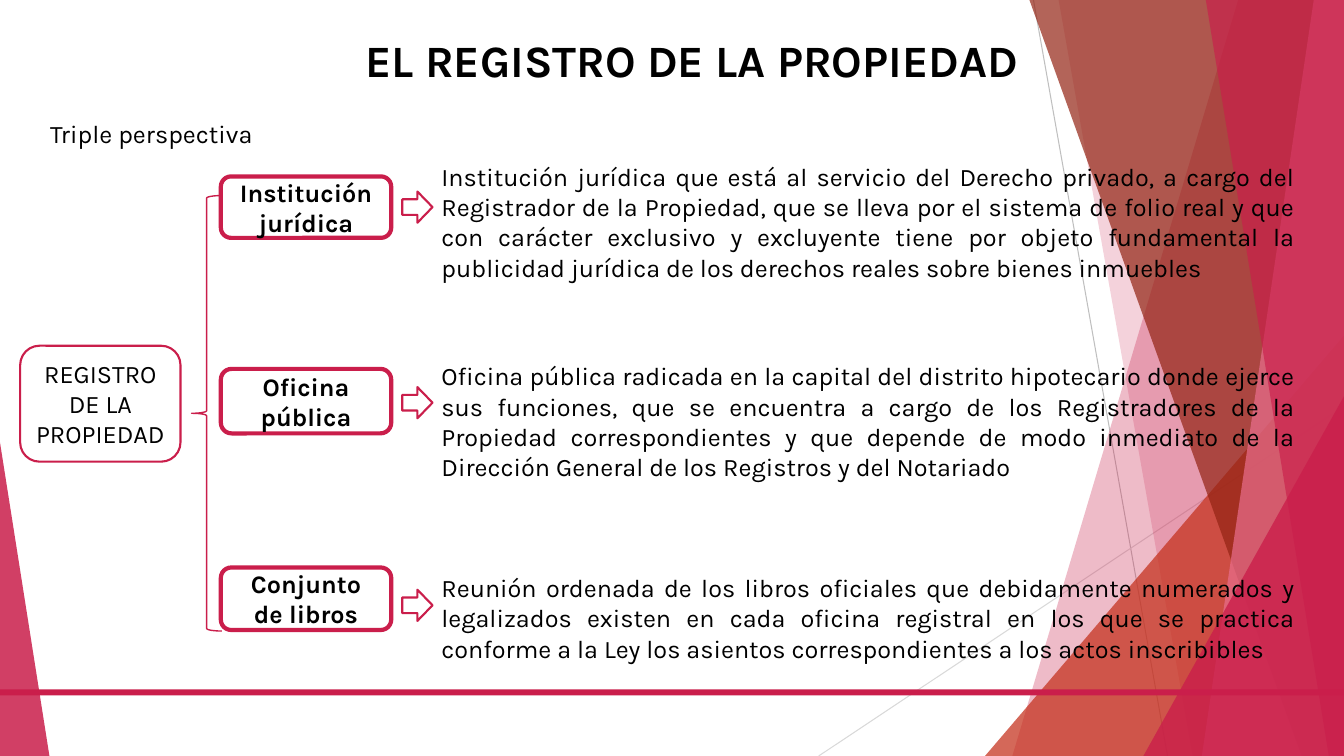
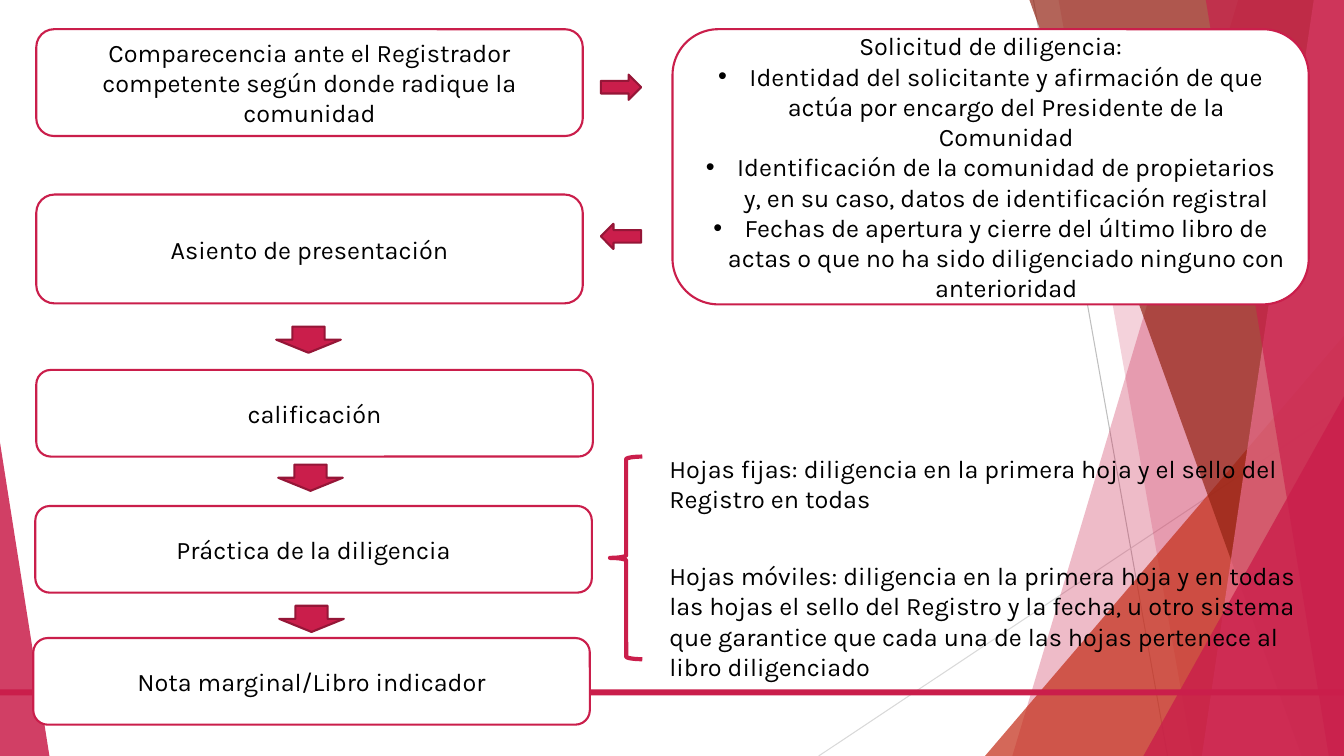
"""Build two slides on the land registry over one shared faceted backdrop."""
from lxml import etree
from pptx import Presentation
from pptx import util as u
from pptx.dml.color import RGBColor
from pptx.enum import shapes, text
from pptx.oxml import ns

CELL = 0.1
COLUMNS, ROWS = 133.3, 75
FONT, BODY_SIZE, TITLE_SIZE = "Karla", 18, 32
CRIMSON, DARK_CRIMSON, PINK = "CA1E4B", "951637", "E96E8E"
RUST, MAROON = "C42F1A", "932313"
BLACK, WHITE = "000000", "FFFFFF"
Preset, Align, Anchor = shapes.MSO_SHAPE, text.PP_ALIGN, text.MSO_ANCHOR


def grid(*cells):
    return [u.Inches(round(cell * CELL, 2)) for cell in cells]


def colour(value):
    return RGBColor.from_string(value)


def write(frame, content, size=BODY_SIZE, bold=False, align=Align.LEFT,
          anchor=Anchor.TOP, bullets=()):
    frame.word_wrap = True
    frame.auto_size = text.MSO_AUTO_SIZE.NONE
    frame.vertical_anchor = anchor
    for index, line in enumerate([content, *bullets]):
        paragraph = frame.add_paragraph() if index else frame.paragraphs[0]
        paragraph.alignment = align
        run = paragraph.add_run()
        run.text = line
        run.font.name, run.font.size, run.font.bold = FONT, u.Pt(size), bold
        run.font.color.rgb = colour(BLACK)
        if index:
            properties = paragraph._p.get_or_add_pPr()
            indent = u.Inches(0.31)
            properties.set("marL", str(indent))
            properties.set("indent", str(-indent))
            etree.SubElement(properties, ns.qn("a:buFont"), typeface="Arial")
            etree.SubElement(properties, ns.qn("a:buChar"), char="•")


class Deck:
    def __init__(self):
        self.presentation = Presentation()
        self.presentation.slide_width, self.presentation.slide_height = grid(COLUMNS, ROWS)
        self.slide = None

    def add_slide(self, title=None):
        layout = "Title Only" if title else "Blank"
        self.slide = self.presentation.slides.add_slide(
            self.presentation.slide_layouts.get_by_name(layout))
        if title:
            shape = self.slide.shapes.title
            shape.left, shape.top, shape.width, shape.height = grid(5.9, 2.7, 125.5, 6.4)
            write(shape.text_frame, title, size=TITLE_SIZE, bold=True, align=Align.CENTER)

    def paint(self, shape, fill=None, line=None, width=1.5, opacity=100):
        shape.shadow.inherit = False
        if fill:
            shape.fill.solid()
            shape.fill.fore_color.rgb = colour(fill)
        else:
            shape.fill.background()
        if opacity < 100:
            tint = shape.element.spPr.find(".//" + ns.qn("a:srgbClr"))
            etree.SubElement(tint, ns.qn("a:alpha"), val=str(opacity * 1000))
        if line:
            shape.line.color.rgb = colour(line)
            shape.line.width = u.Pt(width)
        else:
            shape.line.fill.background()

    def shape(self, preset, place, adjust=None, **style):
        shape = self.slide.shapes.add_shape(preset, *grid(*place))
        if adjust is not None:
            shape.adjustments[0] = adjust
        self.paint(shape, **style)
        return shape

    def facet(self, points, **style):
        corners = [tuple(grid(*point)) for point in points]
        builder = self.slide.shapes.build_freeform(*corners[0])
        builder.add_line_segments(corners[1:], close=True)
        self.paint(builder.convert_to_shape(), **style)

    def rule(self, ends, line):
        connector = self.slide.shapes.add_connector(
            shapes.MSO_CONNECTOR.STRAIGHT, *grid(*ends))
        connector.line.color.rgb = colour(line)
        connector.line.width = u.Pt(0.75)
        etree.SubElement(connector.element.spPr, ns.qn("a:effectLst"))

    def box(self, place, content, width=1.5, **style):
        shape = self.shape(Preset.ROUNDED_RECTANGLE, place, fill=WHITE,
                           line=CRIMSON, width=width)
        write(shape.text_frame, content, align=Align.CENTER,
              anchor=Anchor.MIDDLE, **style)

    def arrow(self, preset, place, fill=CRIMSON, line=DARK_CRIMSON):
        self.shape(preset, place, fill=fill, line=line)

    def brace(self, place, width):
        self.shape(Preset.LEFT_BRACE, place, line=CRIMSON, width=width)

    def note(self, place, content, **style):
        write(self.slide.shapes.add_textbox(*grid(*place)).text_frame, content, **style)

    def move_to_master(self):
        tree = self.presentation.slide_master.shapes.element
        drawn = [shape for shape in self.slide.shapes if not shape.is_placeholder]
        for number, shape in enumerate(drawn, 100):
            shape.element.find(".//" + ns.qn("p:cNvPr")).set("id", str(number))
            tree.append(shape.element)


def draw_backdrop(deck):
    def band(top, bottom, fill, opacity):
        deck.facet([(top, 0), (COLUMNS, 0), (COLUMNS, ROWS), (bottom, ROWS)],
                   fill=fill, opacity=opacity)

    def corner(left, top, width, fill, opacity, apex=1):
        deck.shape(Preset.ISOSCELES_TRIANGLE, (left, top, width, ROWS - top),
                   adjust=apex, fill=fill, opacity=opacity)

    deck.rule((102.5, 0, 115.8, ROWS), "BFBFBF")
    deck.rule((COLUMNS, 40.3, 81.2, ROWS), "D9D9D9")
    band(122.8, 100.4, CRIMSON, 30)
    band(105, 118.3, CRIMSON, 20)
    corner(97.7, 33.3, 35.6, RUST, 72)
    band(102.1, 129.1, MAROON, 70)
    band(130.3, 119.2, PINK, 70)
    band(119.6, 131.8, CRIMSON, 65)
    corner(113.4, 39.3, 19.9, CRIMSON, 80)
    corner(0, 43.9, 4.9, CRIMSON, 85, apex=0)
    deck.shape(Preset.RECTANGLE, (0, 68.4, COLUMNS, 0.6), fill=CRIMSON)
    deck.move_to_master()


def draw_perspectives(deck):
    deck.note((4, 11.2, 24, 4), "Triple perspectiva")
    deck.box((2, 34.3, 15.9, 11.5), "REGISTRO DE LA PROPIEDAD")
    deck.brace((19, 19.4, 3, 43.2), width=1)
    perspectives = [
        ("Institución jurídica", 17.5, 6.1, 19, 15.5,
         "Institución jurídica que está al servicio del Derecho privado, a cargo del "
         "Registrador de la Propiedad, que se lleva por el sistema de folio real y que "
         "con carácter exclusivo y excluyente tiene por objeto fundamental la publicidad "
         "jurídica de los derechos reales sobre bienes inmuebles"),
        ("Oficina pública", 36.6, 6.4, 38.4, 35.3,
         "Oficina pública radicada en la capital del distrito hipotecario donde ejerce "
         "sus funciones, que se encuentra a cargo de los Registradores de la Propiedad "
         "correspondientes y que depende de modo inmediato de la Dirección General de "
         "los Registros y del Notariado"),
        ("Conjunto de libros", 56.3, 6.2, 58.5, 56.3,
         "Reunión ordenada de los libros oficiales que debidamente numerados y "
         "legalizados existen en cada oficina registral en los que se practica conforme "
         "a la Ley los asientos correspondientes a los actos inscribibles"),
    ]
    for label, box_top, box_height, arrow_top, note_top, definition in perspectives:
        deck.box((21.9, box_top, 16.9, box_height), label, width=3, bold=True)
        deck.arrow(Preset.RIGHT_ARROW, (39.9, arrow_top, 3, 3.1), fill=WHITE, line=CRIMSON)
        deck.note((42.8, note_top, 86.6, 13.1), definition, align=Align.JUSTIFY)


def draw_procedure(deck):
    deck.box((3.6, 2.9, 54.2, 10.6),
             "Comparecencia ante el Registrador competente según donde radique la comunidad")
    deck.arrow(Preset.RIGHT_ARROW, (59.6, 7.4, 4, 2.5))
    deck.box((66.7, 2.9, 63.1, 27.3), "Solicitud de diligencia:", bullets=[
        "Identidad del solicitante y afirmación de que actúa por encargo del "
        "Presidente de la Comunidad",
        "Identificación de la comunidad de propietarios y, en su caso, datos de "
        "identificación registral",
        "Fechas de apertura y cierre del último libro de actas o que no ha sido "
        "diligenciado ninguno con anterioridad",
    ])
    deck.arrow(Preset.LEFT_ARROW, (59.6, 22.2, 4, 2.5))
    deck.box((3.6, 19.3, 54.2, 10.8), "Asiento de presentación")
    steps = [
        ("calificación", 3.6, 36.7, 27.4, 32.4),
        ("Práctica de la diligencia", 3.5, 50.2, 27.6, 46.1),
        ("Nota marginal/Libro indicador", 3.3, 63.3, 27.7, 60.1),
    ]
    for label, left, top, arrow_left, arrow_top in steps:
        deck.arrow(Preset.DOWN_ARROW, (arrow_left, arrow_top, 6.4, 2.6))
        deck.box((left, top, 55.2, 8.6), label)
    deck.brace((60.5, 45.3, 3.2, 20.1), width=3)
    deck.note((65.4, 44.5, 64.4, 7.1),
              "Hojas fijas: diligencia en la primera hoja y el sello del Registro en todas")
    deck.note((65.4, 55.1, 64.4, 13.1),
              "Hojas móviles: diligencia en la primera hoja y en todas las hojas el sello "
              "del Registro y la fecha, u otro sistema que garantice que cada una de las "
              "hojas pertenece al libro diligenciado")


def main():
    deck = Deck()
    deck.add_slide("EL REGISTRO DE LA PROPIEDAD")
    draw_backdrop(deck)
    draw_perspectives(deck)
    deck.add_slide()
    draw_procedure(deck)
    deck.presentation.save("out.pptx")


if __name__ == "__main__":
    main()
